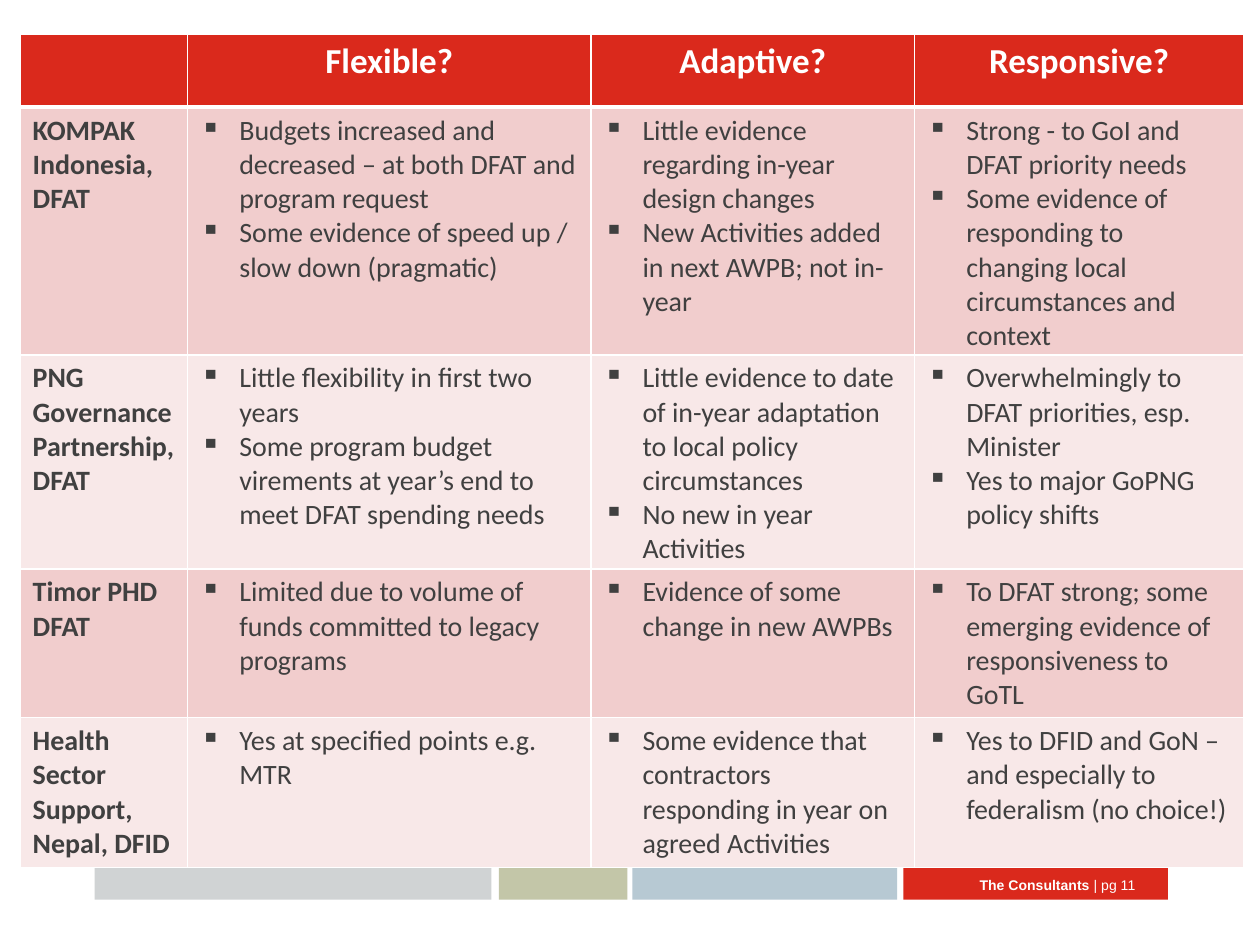
"""Build a slide that compares four aid programs in a table."""
from lxml import etree
from pptx import Presentation
from pptx.dml.color import RGBColor
from pptx.enum.shapes import MSO_SHAPE as Shape
from pptx.enum.text import MSO_ANCHOR as Anchor, PP_ALIGN as Align
from pptx.oxml.ns import qn
from pptx.util import Inches, Pt

RED = RGBColor(0xDA, 0x29, 0x1C)
GREY = RGBColor(0xD0, 0xD3, 0xD4)
OLIVE = RGBColor(0xC3, 0xC6, 0xA8)
BLUE = RGBColor(0xB7, 0xC9, 0xD3)
PINK = RGBColor(0xF1, 0xCD, 0xCD)
PALE_PINK = RGBColor(0xF8, 0xE8, 0xE8)
DARK = RGBColor(0x40, 0x40, 0x40)
WHITE = RGBColor(0xFF, 0xFF, 0xFF)

FOOTER_BARS = [(7.17, 2.1, RED), (0.75, 3.15, GREY), (3.96, 1.02, OLIVE), (5.02, 2.1, BLUE)]
COLUMN_WIDTHS = [1.33, 3.2, 2.57, 2.61]
ROW_HEIGHTS = [0.58, 1.79, 1.69, 1.18, 1.19]
HEADINGS = ["", "Flexible?", "Adaptive?", "Responsive?"]
PROGRAMS = [
    ("KOMPAK Indonesia, DFAT",
     ["Budgets increased and decreased – at both DFAT and program request",
      "Some evidence of speed up / slow down (pragmatic)"],
     ["Little evidence regarding in-year design changes",
      "New Activities added in next AWPB; not in-year"],
     ["Strong - to GoI and DFAT priority needs",
      "Some evidence of responding to changing local circumstances and context"]),
    ("PNG Governance Partnership, DFAT",
     ["Little flexibility in first two years",
      "Some program budget virements at year’s end to meet DFAT spending needs"],
     ["Little evidence to date of in-year adaptation to local policy circumstances",
      "No new in year Activities"],
     ["Overwhelmingly to DFAT priorities, esp. Minister",
      "Yes to major GoPNG policy shifts"]),
    ("Timor PHD DFAT",
     ["Limited due to volume of funds committed to legacy programs"],
     ["Evidence of some change in new AWPBs"],
     ["To DFAT strong; some emerging evidence of responsiveness to GoTL"]),
    ("Health Sector Support, Nepal, DFID",
     ["Yes at specified points e.g. MTR"],
     ["Some evidence that contractors responding in year on agreed Activities"],
     ["Yes to DFID and GoN – and especially to federalism (no choice!)"]),
]


def add_span(para, text, font_name, size, color, bold):
    span = para.add_run()
    span.text = text
    span.font.name = font_name
    span.font.size = Pt(size)
    span.font.color.rgb = color
    span.font.bold = bold


def style_cell(cell, color, top, bottom):
    properties = cell._tc.get_or_add_tcPr()
    for side, width in (("L", 1), ("R", 1), ("T", top), ("B", bottom)):
        border = etree.SubElement(properties, qn(f"a:ln{side}"), w=str(Pt(width)))
        fill = etree.SubElement(border, qn("a:solidFill"))
        etree.SubElement(fill, qn("a:srgbClr"), val=str(WHITE))
    cell.fill.solid()
    cell.fill.fore_color.rgb = color


deck = Presentation()
deck.slide_width = Inches(10)
deck.slide_height = Inches(7.5)
page = deck.slides.add_slide(deck.slide_layouts[6])

for left, width, color in FOOTER_BARS:
    bar = page.shapes.add_shape(
        Shape.ROUNDED_RECTANGLE, Inches(left), Inches(6.88), Inches(width), Inches(0.26))
    bar.adjustments[0] = 0
    bar.shadow.inherit = False
    bar.fill.solid()
    bar.fill.fore_color.rgb = color
    bar.line.fill.background()

footer = page.shapes.add_textbox(Inches(7.55), Inches(6.82), Inches(1.56), Inches(0.4))
footer.text_frame.word_wrap = True
footer.text_frame.vertical_anchor = Anchor.MIDDLE
para = footer.text_frame.paragraphs[0]
para.alignment = Align.RIGHT
add_span(para, "The Consultants ", "Arial", 8, WHITE, True)
add_span(para, "| pg 11", "Arial", 8, WHITE, False)

table = page.shapes.add_table(
    len(ROW_HEIGHTS), len(COLUMN_WIDTHS),
    Inches(0.16), Inches(0.27), Inches(9.7), Inches(6.45)).table
for column, width in zip(table.columns, COLUMN_WIDTHS):
    column.width = Inches(width)
for row, height in zip(table.rows, ROW_HEIGHTS):
    row.height = Inches(height)

for column_index, heading in enumerate(HEADINGS):
    cell = table.cell(0, column_index)
    style_cell(cell, RED, 1, 3)
    if heading:
        para = cell.text_frame.paragraphs[0]
        para.alignment = Align.CENTER
        add_span(para, heading, "Calibri", 20, WHITE, True)

for row_index, (program, *findings) in enumerate(PROGRAMS, start=1):
    color = PINK if row_index % 2 else PALE_PINK
    top = 3 if row_index == 1 else 1
    name_cell = table.cell(row_index, 0)
    style_cell(name_cell, color, top, 1)
    add_span(name_cell.text_frame.paragraphs[0], program, "Calibri", 16, DARK, True)
    for column_index, points in enumerate(findings, start=1):
        cell = table.cell(row_index, column_index)
        style_cell(cell, color, top, 1)
        frame = cell.text_frame
        for point_index, point in enumerate(points):
            para = frame.add_paragraph() if point_index else frame.paragraphs[0]
            properties = para._p.get_or_add_pPr()
            properties.set("marL", str(Inches(0.31)))
            properties.set("indent", str(Inches(-0.31)))
            etree.SubElement(properties, qn("a:buChar"), char="▪")
            add_span(para, point, "Calibri", 16, DARK, False)

deck.save("out.pptx")
